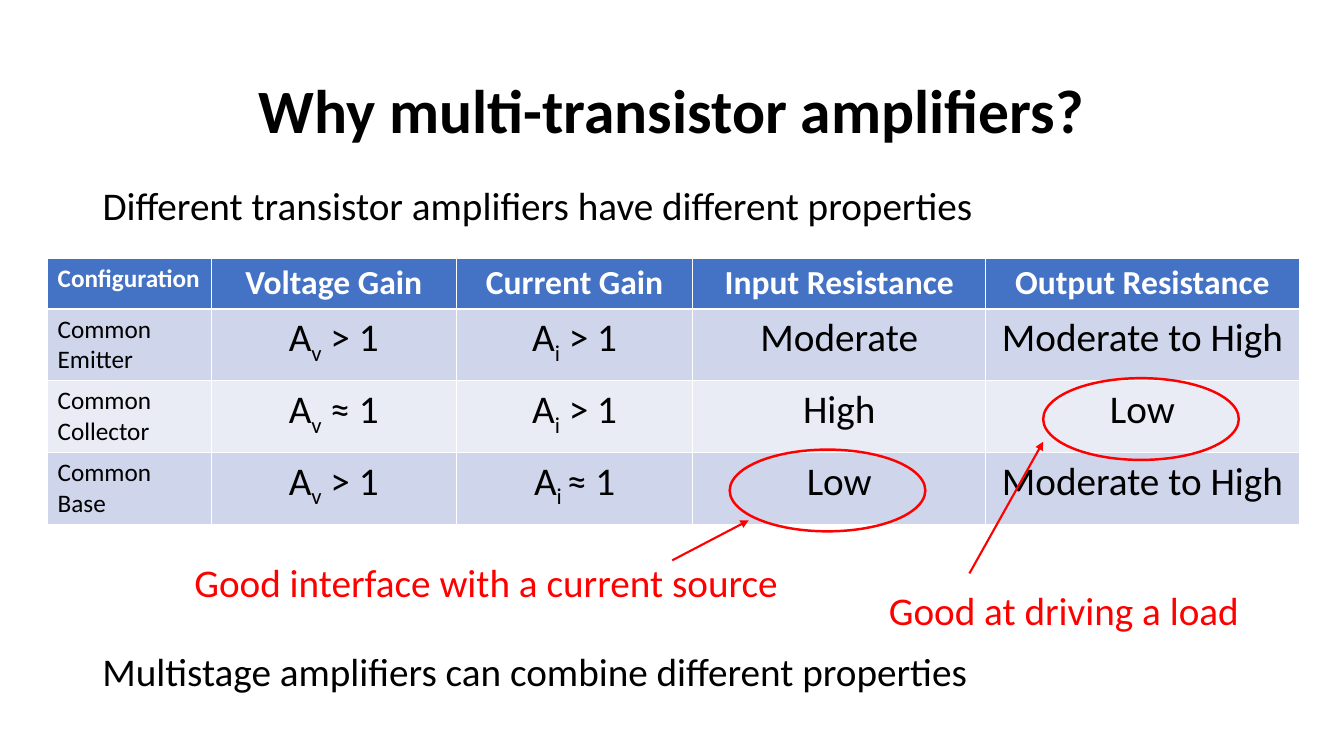
from lxml import etree
from pptx import Presentation
from pptx import util as u
from pptx.dml.color import RGBColor
from pptx.enum import shapes, text
from pptx.oxml.ns import qn

COLORS = {"black": "000000", "white": "FFFFFF", "red": "FF0000",
          "header": "4472C4", "band": "CFD5EA", "light": "E9EBF5"}
RGB = {name: RGBColor.from_string(value) for name, value in COLORS.items()}


def add_run(p, words, color, **fmt):
    r = p.add_run()
    r.text = words
    r.font.color.rgb = RGB[color]
    for key, value in {"name": "Calibri", "size": u.Pt(28), "bold": False, **fmt}.items():
        setattr(r.font, key, value)
    return r


def fill_text(sp, box, words, color, **fmt):
    sp.left, sp.top, sp.width, sp.height = (u.Cm(v) for v in box)
    tf = sp.text_frame
    tf.word_wrap = True
    tf.auto_size = text.MSO_AUTO_SIZE.NONE
    p = tf.paragraphs[0]
    p.line_spacing = 0.9
    add_run(p, words, color, **fmt)
    return p


prs = Presentation()
prs.slide_width, prs.slide_height = u.Cm(33.87), u.Cm(19.05)
s = prs.slides.add_slide(prs.slide_layouts[1])

# Title
p = fill_text(s.shapes.title, (2.33, 1.01, 29.21, 3.68),
              "Why multi-transistor amplifiers?", "black", size=u.Pt(44), bold=True)
p.alignment = text.PP_ALIGN.CENTER
s.shapes.title.text_frame.vertical_anchor = text.MSO_ANCHOR.MIDDLE

# Opening statement, without a bullet
p = fill_text(s.placeholders[1], (2.33, 4.57, 29.21, 1.7),
              "Different transistor amplifiers have different properties", "black")
p.space_before = u.Pt(10)
pPr = p._p.get_or_add_pPr()
pPr.set("marL", "0")
pPr.set("indent", "0")
etree.SubElement(pPr, qn("a:buNone"))

# Table of amplifier properties; a tuple holds base, subscript and rest
rows = [
    ["Configuration", "Voltage Gain", "Current Gain", "Input Resistance", "Output Resistance"],
    ["Common Emitter", ("A", "v", " > 1"), ("A", "i", " > 1"), "Moderate", "Moderate to High"],
    ["Common Collector", ("A", "v", " ≈ 1"), ("A", "i", " > 1"), "High", "Low"],
    ["Common Base", ("A", "v", " > 1"), ("A", "i ", "≈ 1"), "Low", "Moderate to High"],
]
col_widths = [4.12, 6.18, 5.96, 7.38, 7.9]
row_heights = [1.27, 1.81, 1.81, 1.81]
tbl = s.shapes.add_table(len(rows), len(col_widths), u.Cm(1.2), u.Cm(6.5),
                         u.Cm(sum(col_widths)), u.Cm(sum(row_heights))).table
for col, width in zip(tbl.columns, col_widths):
    col.width = u.Cm(width)
for row, height in zip(tbl.rows, row_heights):
    row.height = u.Cm(height)

for i, row in enumerate(rows):
    fill = "header" if i == 0 else "band" if i % 2 else "light"
    for j, content in enumerate(row):
        cell = tbl.cell(i, j)
        cell.fill.solid()
        cell.fill.fore_color.rgb = RGB[fill]
        p = cell.text_frame.paragraphs[0]
        if j > 0:
            p.alignment = text.PP_ALIGN.CENTER
        size = 18 if j == 0 else 24 if i == 0 else 28
        parts = content if isinstance(content, tuple) else (content,)
        for k, part in enumerate(parts):
            r = add_run(p, part, "black" if i else "white", size=u.Pt(size), bold=i == 0)
            if k == 1:
                r.font._element.set("baseline", "-25000")

# Remarks and closing statement
for box, words, color in [
    ((4.65, 14.07, 16.2, 1.7), "Good interface with a current source", "red"),
    ((22.15, 14.78, 9.96, 1.7), "Good at driving a load", "red"),
    ((2.33, 16.33, 29.21, 1.7), "Multistage amplifiers can combine different properties", "black"),
]:
    sp = s.shapes.add_textbox(0, 0, 0, 0)
    fill_text(sp, box, words, color).space_before = u.Pt(10)

# Rings around the low resistances
for left, top in [(18.39, 11.33), (26.29, 9.53)]:
    sp = s.shapes.add_shape(shapes.MSO_SHAPE.OVAL, u.Cm(left), u.Cm(top), u.Cm(4.93), u.Cm(2.06))
    sp.shadow.inherit = False
    sp.fill.background()
    sp.line.color.rgb = RGB["red"]
    sp.line.width = u.Pt(1.75)

# Arrows from the remarks to the rings
for ends in [(16.94, 14.12, 18.87, 13.11), (24.43, 14.45, 26.29, 11.13)]:
    cxn = s.shapes.add_connector(shapes.MSO_CONNECTOR.STRAIGHT, *(u.Cm(v) for v in ends))
    cxn.line.color.rgb = RGB["red"]
    cxn.line.width = u.Pt(1.5)
    etree.SubElement(cxn.line._get_or_add_ln(), qn("a:tailEnd"), type="triangle")
    etree.SubElement(cxn._element.spPr, qn("a:effectLst"))

prs.save("out.pptx")
